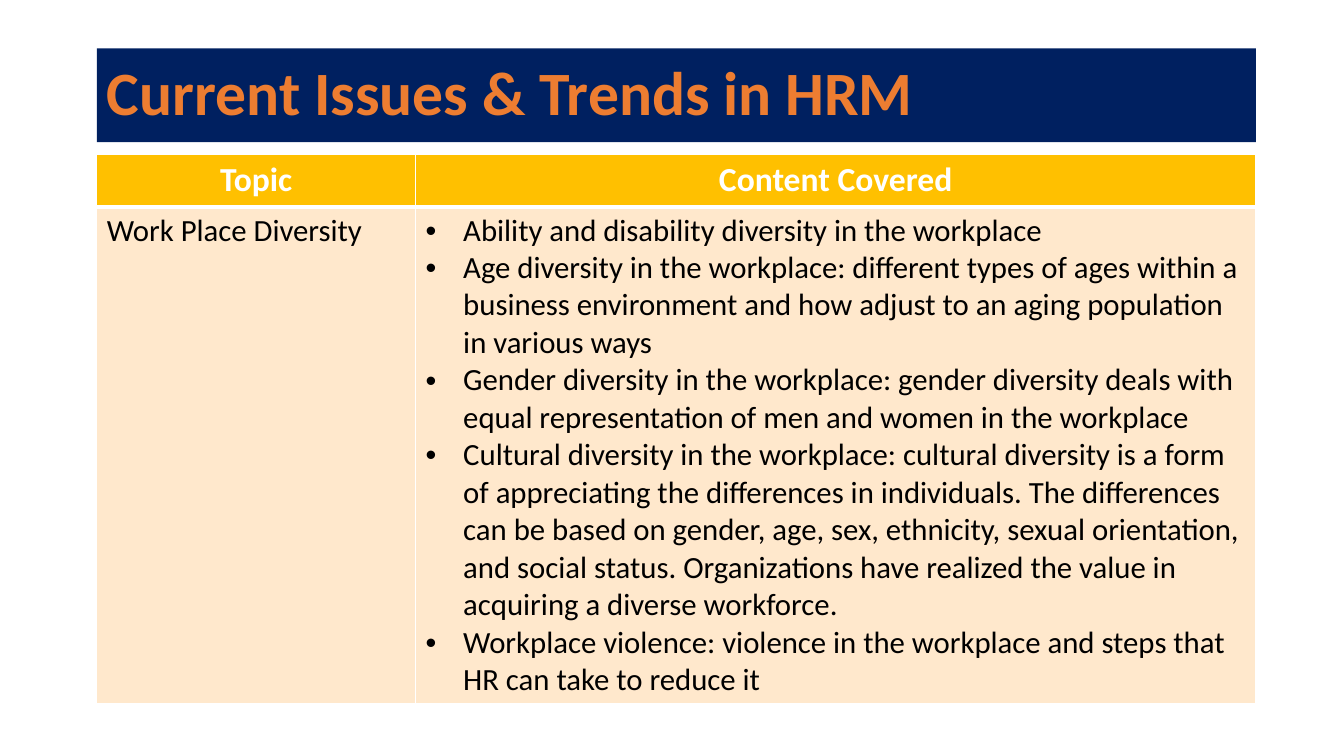
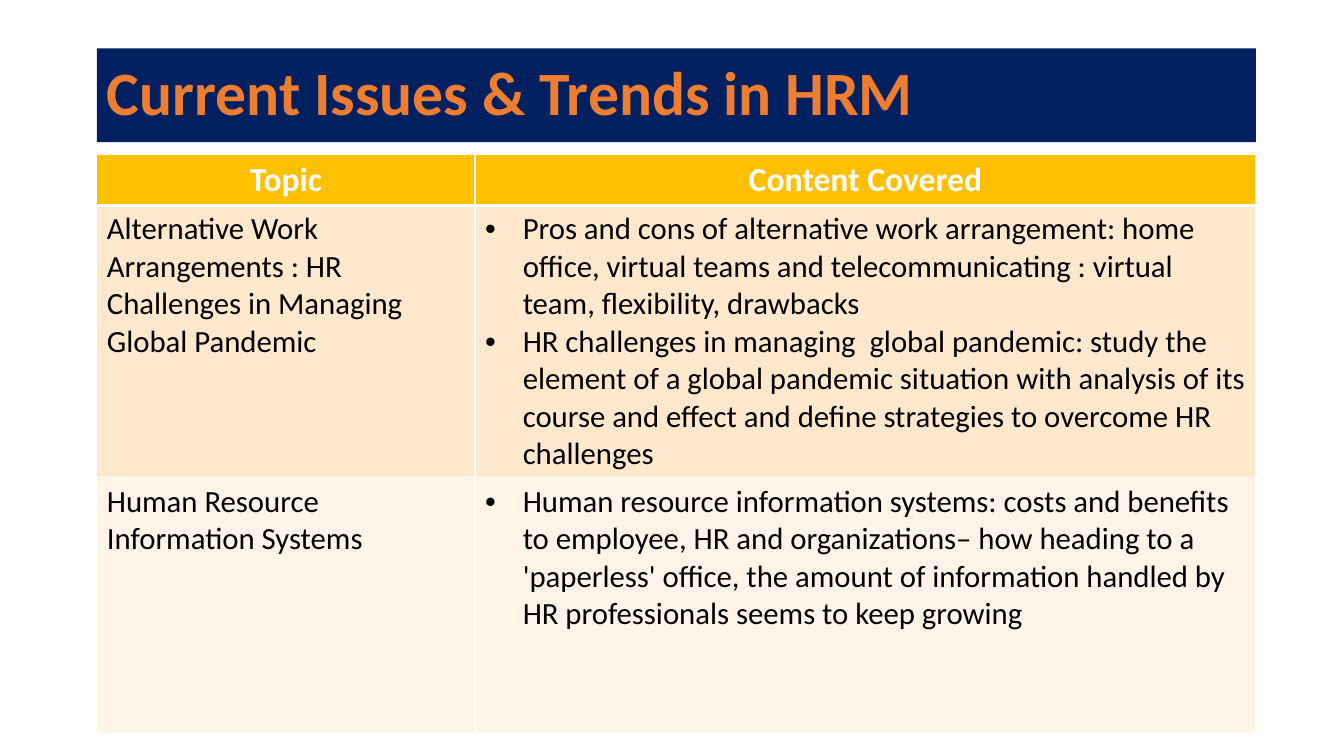
import dataclasses

import lxml.etree
import pptx
import pptx.dml.color
import pptx.enum.text
import pptx.oxml.ns
import pptx.util

Cm = pptx.util.Cm
Pt = pptx.util.Pt
qn = pptx.oxml.ns.qn
ALIGN = pptx.enum.text.PP_ALIGN


@dataclasses.dataclass(frozen=True)
class Theme:
    font: str = "Calibri"
    navy: str = "002060"
    orange: str = "ED7D31"
    gold: str = "FFC000"
    white: str = "FFFFFF"
    black: str = "000000"
    bands: tuple = ("FFE8CC", "FFF4E7")
    title_size: int = 44
    header_size: int = 24
    body_size: int = 22
    left: float = 2.44
    width: float = 29.21


def rgb(value):
    return pptx.dml.color.RGBColor.from_string(value)


def write(p, text, font, size, color, bold=False, align=ALIGN.LEFT, bullet=False):
    p.alignment = align
    r = p.add_run()
    r.text = text
    r.font.name = font
    r.font.size = Pt(size)
    r.font.bold = bold
    r.font.color.rgb = rgb(color)
    if bullet:
        pPr = p._p.get_or_add_pPr()
        indent = Cm(0.95)
        pPr.set("marL", str(indent))
        pPr.set("indent", str(-indent))
        lxml.etree.SubElement(pPr, qn("a:buFont"), typeface="Arial")
        lxml.etree.SubElement(pPr, qn("a:buChar"), char="•")


class Deck:
    """Hold the theme and the current slide, and draw each kind of element."""

    def __init__(self, theme):
        self.theme = theme
        self.prs = pptx.Presentation()
        self.prs.slide_width = Cm(33.87)
        self.prs.slide_height = Cm(19.05)
        self.slide = None

    def add_slide(self, title):
        self.slide = self.prs.slides.add_slide(self.prs.slide_layouts[5])
        self.title(title)

    def title(self, text):
        t = self.theme
        sp = self.slide.shapes.title
        sp.left, sp.top = Cm(t.left), Cm(1.22)
        sp.width, sp.height = Cm(t.width), Cm(2.36)
        sp.fill.solid()
        sp.fill.fore_color.rgb = rgb(t.navy)
        tf = sp.text_frame
        tf.word_wrap = True
        tf.auto_size = pptx.enum.text.MSO_AUTO_SIZE.NONE
        tf.vertical_anchor = pptx.enum.text.MSO_ANCHOR.MIDDLE
        p = tf.paragraphs[0]
        p.line_spacing = 0.9
        write(p, text, t.font, t.title_size, t.orange, bold=True)

    def table(self, header, rows, topic_width, heights):
        t = self.theme
        shape = self.slide.shapes.add_table(
            len(rows) + 1, 2, Cm(t.left), Cm(3.89), Cm(t.width), Cm(sum(heights)))
        table = shape.table
        for column, width in zip(table.columns, (topic_width, t.width - topic_width)):
            column.width = Cm(width)
        for row, height in zip(table.rows, heights):
            row.height = Cm(height)
        for i, text in enumerate(header):
            self.cell(table.cell(0, i), [text], t.gold, bottom=3, size=t.header_size,
                      color=t.white, bold=True, align=ALIGN.CENTER)
        for i, (topic, points) in enumerate(rows):
            style = dict(size=t.body_size, color=t.black)
            fill = t.bands[i % len(t.bands)]
            top = 1 if i else 3
            self.cell(table.cell(i + 1, 0), [topic], fill, top=top, **style)
            self.cell(table.cell(i + 1, 1), points, fill, top=top, bullet=True, **style)

    def cell(self, cell, lines, fill, top=1, bottom=1, **style):
        cell.fill.solid()
        cell.fill.fore_color.rgb = rgb(fill)
        tcPr = cell._tc.get_or_add_tcPr()
        for i, (side, width) in enumerate(zip("LRTB", (1, 1, top, bottom))):
            ln = lxml.etree.Element(qn("a:ln" + side), w=str(Pt(width)))
            solid = lxml.etree.SubElement(ln, qn("a:solidFill"))
            lxml.etree.SubElement(solid, qn("a:srgbClr"), val=self.theme.white)
            tcPr.insert(i, ln)
        tf = cell.text_frame
        for i, line in enumerate(lines):
            p = tf.add_paragraph() if i else tf.paragraphs[0]
            write(p, line, self.theme.font, **style)


TITLE = "Current Issues & Trends in HRM"
HEADER = ("Topic", "Content Covered")
DIVERSITY = [
    ("Work Place Diversity", [
        "Ability and disability diversity in the workplace",
        "Age diversity in the workplace: different types of ages within a business "
        "environment and how adjust to an aging population in various ways",
        "Gender diversity in the workplace: gender diversity deals with equal "
        "representation of men and women in the workplace",
        "Cultural diversity in the workplace: cultural diversity is a form of "
        "appreciating the differences in individuals. The differences can be based on "
        "gender, age, sex, ethnicity, sexual orientation, and social status. "
        "Organizations have realized the value in acquiring a diverse workforce.",
        "Workplace violence: violence in the workplace and steps that HR can take to "
        "reduce it",
    ]),
]
ARRANGEMENTS = [
    ("Alternative Work Arrangements : HR Challenges in Managing Global Pandemic", [
        "Pros and cons of alternative work arrangement: home office, virtual teams and "
        "telecommunicating : virtual team, flexibility, drawbacks",
        "HR challenges in managing  global pandemic: study the element of a global "
        "pandemic situation with analysis of its course and effect and define "
        "strategies to overcome HR challenges",
    ]),
    ("Human Resource Information Systems", [
        "Human resource information systems: costs and benefits to employee, HR and "
        "organizations– how heading to a 'paperless' office, the amount of information "
        "handled by HR professionals seems to keep growing",
    ]),
]


def main():
    deck = Deck(Theme())
    for rows, topic_width, heights in (
        (DIVERSITY, 8.03, (1.32, 12.5)),
        (ARRANGEMENTS, 9.53, (1.27, 6.86, 6.45)),
    ):
        deck.add_slide(TITLE)
        deck.table(HEADER, rows, topic_width, heights)
    deck.prs.save("out.pptx")


if __name__ == "__main__":
    main()
